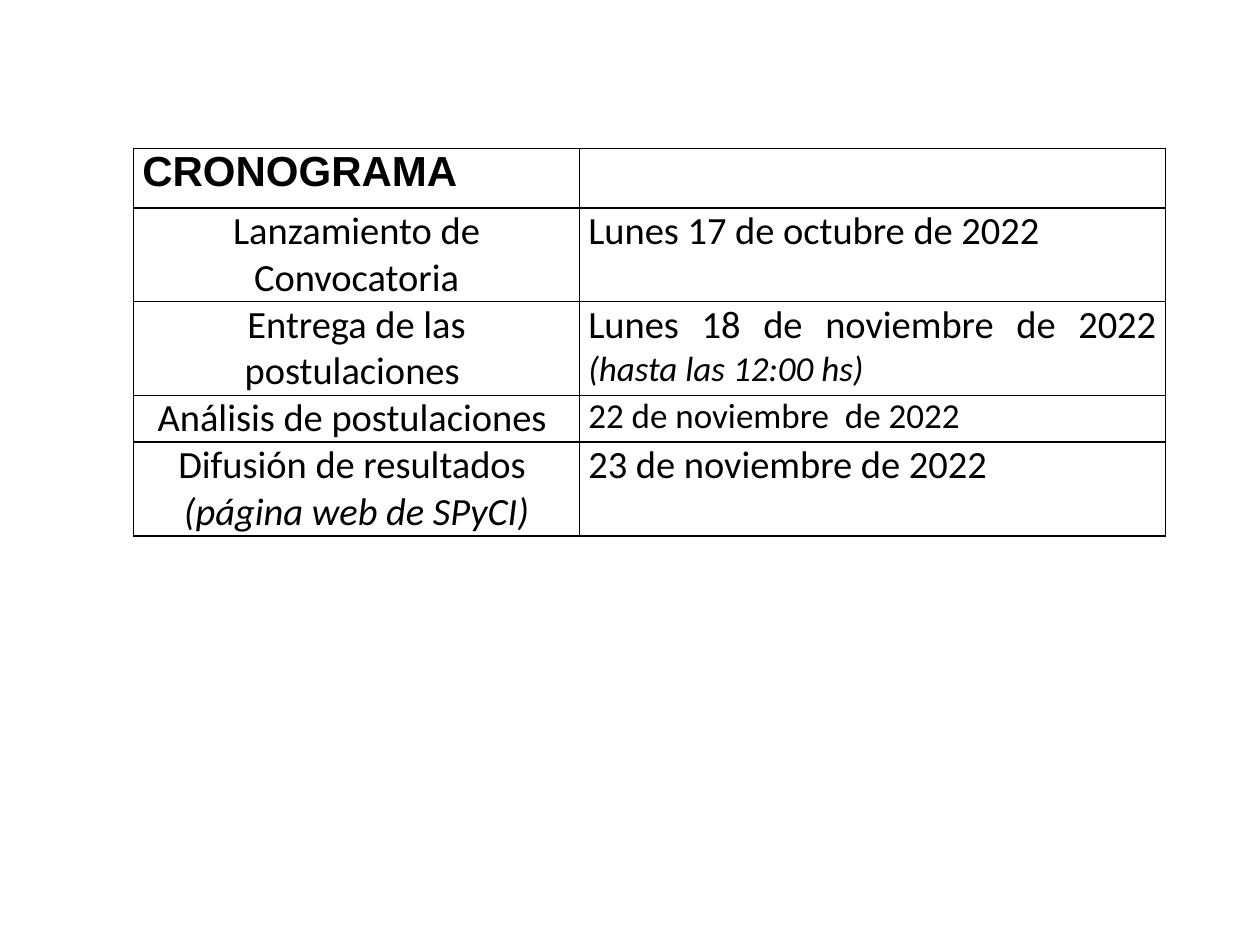
from dataclasses import dataclass

from lxml.etree import SubElement
from pptx import Presentation
from pptx.dml.color import RGBColor
from pptx.enum.text import PP_ALIGN
from pptx.oxml.ns import qn
from pptx.util import Inches, Pt


@dataclass(frozen=True)
class Theme:
    ink: str = "000000"
    head_font: str = "Arial"
    body_font: str = "Calibri"
    head: int = 24
    body: int = 22
    small: int = 20
    rule: int = 1


THEME = Theme()
TITLE = "CRONOGRAMA"
BODY, SMALL = THEME.body, THEME.small
STEPS = [
    ([[("Lanzamiento de Convocatoria", BODY, False)]],
     [[("Lunes 17 de octubre de 2022", BODY, False)]]),
    ([[("Entrega de las postulaciones ", BODY, False)]],
     [[("Lunes 18 de noviembre de 2022 ", BODY, False),
       ("(hasta las 12:00 hs)", SMALL, True)]]),
    ([[("Análisis de postulaciones ", BODY, False)]],
     [[("22 de noviembre  de 2022", SMALL, False)]]),
    ([[("Difusión de resultados ", BODY, False)],
      [("(página web de SPyCI)", BODY, True)]],
     [[("23 de noviembre de 2022", BODY, False)]]),
]
COLS = [3.54, 4.65]
ROWS = [0.47, 0.73, 0.73, 0.37, 0.73]


def style(run, font, size, bold=False, italic=False):
    run.font.name = font
    run.font.size = Pt(size)
    run.font.bold = bold
    run.font.italic = italic
    run.font.color.rgb = RGBColor.from_string(THEME.ink)


def frame(cell):
    cell.margin_left = cell.margin_right = Inches(0.07)
    cell.margin_top = cell.margin_bottom = 0
    props = cell._tc.get_or_add_tcPr()
    for side in ("a:lnL", "a:lnR", "a:lnT", "a:lnB"):
        line = SubElement(props, qn(side), w=str(Pt(THEME.rule)))
        fill = SubElement(line, qn("a:solidFill"))
        SubElement(fill, qn("a:srgbClr"), val=THEME.ink)
    cell.fill.background()


def write(cell, paras, align):
    text = cell.text_frame
    for i, parts in enumerate(paras):
        para = text.add_paragraph() if i else text.paragraphs[0]
        para.alignment = align
        for words, size, italic in parts:
            run = para.add_run()
            run.text = words
            style(run, THEME.body_font, size, italic=italic)


def add_plan(slide, left, top, width, height):
    shape = slide.shapes.add_table(len(ROWS), len(COLS), left, top, width, height)
    table = shape.table
    table.first_row = table.horz_banding = False
    for col, share in zip(table.columns, COLS):
        col.width = int(width * share / sum(COLS))
    for row, share in zip(table.rows, ROWS):
        row.height = int(height * share / sum(ROWS))
    for cell in table.iter_cells():
        frame(cell)

    para = table.cell(0, 0).text_frame.paragraphs[0]
    para.text = TITLE
    para.alignment = PP_ALIGN.JUSTIFY
    style(para.runs[0], THEME.head_font, THEME.head, bold=True)

    for i, (step, date) in enumerate(STEPS, 1):
        write(table.cell(i, 0), step, PP_ALIGN.CENTER)
        write(table.cell(i, 1), date, PP_ALIGN.JUSTIFY)


def main():
    deck = Presentation()
    deck.slide_width, deck.slide_height = Inches(10), Inches(7.5)
    slide = deck.slides.add_slide(deck.slide_layouts[6])
    add_plan(slide, Inches(1.06), Inches(1.18), Inches(8.19), Inches(3.03))
    deck.save("out.pptx")


if __name__ == "__main__":
    main()
